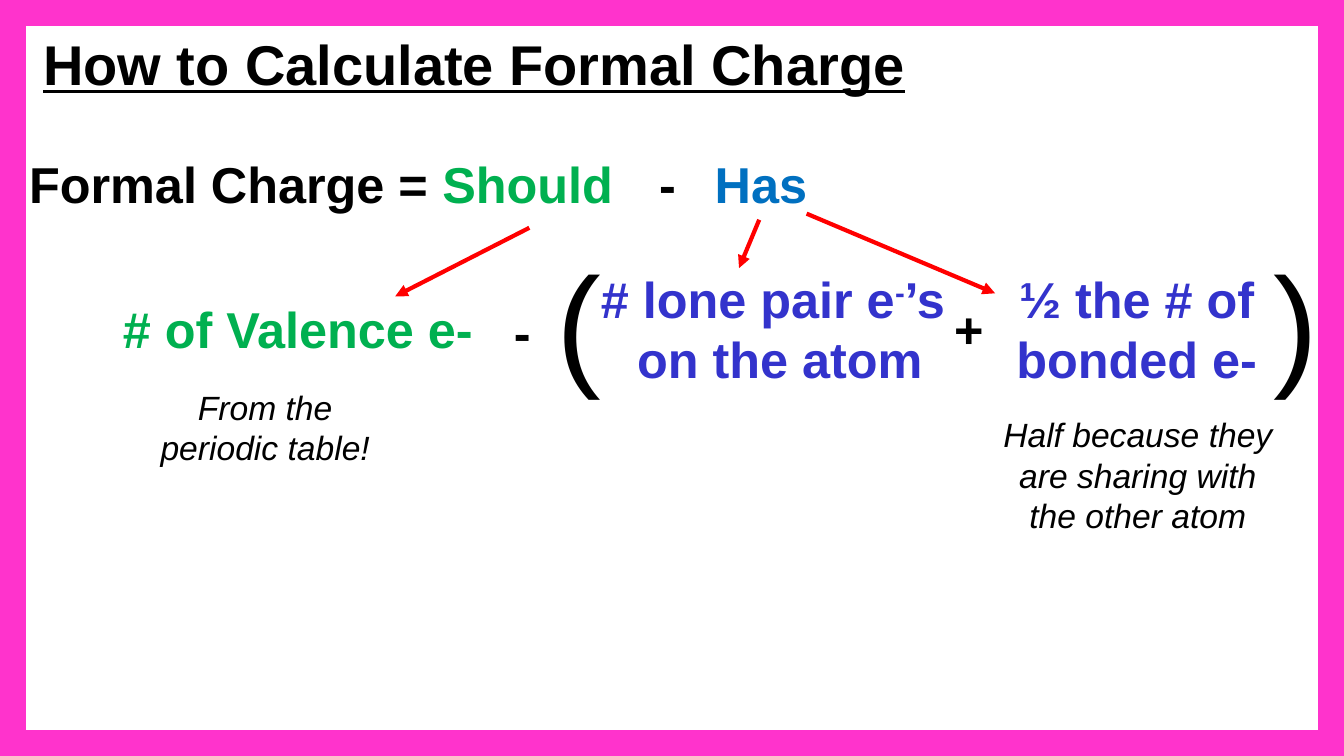
import pptx
import pptx.dml.color
import pptx.enum.shapes
import pptx.enum.text
import pptx.oxml
import pptx.oxml.ns
import pptx.util

Inches = pptx.util.Inches
ALIGN = pptx.enum.text.PP_ALIGN
COLORS = {
    "border": "FF33CC",
    "ink": "000000",
    "should": "00B050",
    "has": "0070C0",
    "owned": "3333CC",
    "arrow": "FF0000",
}

deck = pptx.Presentation()
deck.slide_width, deck.slide_height = Inches(13.33), Inches(7.5)
slide = deck.slides.add_slide(deck.slide_layouts[5])


def style(run, size, color, bold=False, italic=False):
    run.font.name = "Arial"
    run.font.size = pptx.util.Pt(size)
    run.font.bold = bold
    run.font.italic = italic
    run.font.color.rgb = pptx.dml.color.RGBColor.from_string(COLORS[color])


def add_text(box, text, size, color, bold=False, italic=False, align=ALIGN.CENTER):
    frame = slide.shapes.add_textbox(*map(Inches, box)).text_frame
    frame.word_wrap = True
    frame.text = text
    paragraph = frame.paragraphs[0]
    paragraph.alignment = align
    for run in paragraph.runs:
        style(run, size, color, bold, italic)
    return paragraph


# Pink border
border = slide.shapes.add_shape(
    pptx.enum.shapes.MSO_SHAPE.FRAME, 0, 0, deck.slide_width, deck.slide_height)
border.adjustments[0] = 0.032
border.shadow.inherit = False
border.fill.solid()
border.fill.fore_color.rgb = pptx.dml.color.RGBColor.from_string(COLORS["border"])
border.line.color.rgb = pptx.dml.color.RGBColor.from_string(COLORS["border"])
border.line.width = pptx.util.Pt(2)

# Title
title = slide.shapes.title
title.left, title.top = Inches(0.33), Inches(0.15)
title.width, title.height = Inches(10.42), Inches(0.95)
title.text_frame.text = "How to Calculate Formal Charge"
title.text_frame.auto_size = pptx.enum.text.MSO_AUTO_SIZE.NONE
title.text_frame.vertical_anchor = pptx.enum.text.MSO_ANCHOR.MIDDLE
heading = title.text_frame.paragraphs[0]
heading.alignment = ALIGN.LEFT
style(heading.runs[0], 40, "ink", bold=True)
heading.runs[0].font.underline = True

# Definition: should minus has
definition = add_text((0.19, 1.47, 6.2, 0.71), "Formal Charge = ", 36, "ink",
                      bold=True, align=ALIGN.LEFT)
should = definition.add_run()
should.text = "Should"
style(should, 36, "should", bold=True)
add_text((6.99, 1.47, 1.5, 0.71), "Has", 36, "has", bold=True, align=ALIGN.LEFT)

# Terms of the formula
add_text((1.08, 2.91, 3.75, 0.71), "# of Valence e-", 36, "should", bold=True)
add_text((9.4, 2.61, 3.75, 1.31), "½ the # of\vbonded e-", 36, "owned", bold=True)
lone_pairs = add_text((5.86, 2.61, 3.75, 1.31), "# lone pair e", 36, "owned", bold=True)
for part, baseline in (("-", "30000"), ("’s ", "0"), ("on the atom", "0")):
    if part == "on the atom":
        lone_pairs.add_line_break()
    run = lone_pairs.add_run()
    run.text = part
    style(run, 36, "owned", bold=True)
    run._r.get_or_add_rPr().set("baseline", baseline)

# Operators and parentheses
for left, top, operator in ((6.26, 1.47, "-"), (4.82, 2.94, "-"), (9.25, 2.91, "+")):
    add_text((left, top, 0.72, 0.71), operator, 36, "ink", bold=True)
for left, parenthesis in ((5.42, "("), (12.53, ")")):
    add_text((left, 2.31, 0.7, 1.72), parenthesis, 96, "ink", align=ALIGN.LEFT)

# Arrows from the definition to the terms
for start_x, start_y, end_x, end_y in (
    (5.25, 2.26, 3.92, 2.94),
    (7.53, 2.18, 7.33, 2.66),
    (8, 2.12, 9.87, 2.91),
):
    arrow = slide.shapes.add_connector(
        pptx.enum.shapes.MSO_CONNECTOR.STRAIGHT,
        Inches(start_x), Inches(start_y), Inches(end_x), Inches(end_y))
    arrow.line.color.rgb = pptx.dml.color.RGBColor.from_string(COLORS["arrow"])
    arrow.line.width = pptx.util.Pt(3)
    head = pptx.oxml.parse_xml(
        f'<a:tailEnd {pptx.oxml.ns.nsdecls("a")} type="triangle"/>')
    arrow.line._get_or_add_ln().append(head)
    arrow._element.spPr.append(
        pptx.oxml.parse_xml(f'<a:effectLst {pptx.oxml.ns.nsdecls("a")}/>'))

# Explanations under the terms
add_text((9.8, 4.06, 2.97, 1.31), "Half because they are sharing with the other atom",
         24, "ink", italic=True)
add_text((1.34, 3.79, 2.58, 0.91), "From the periodic table!", 24, "ink", italic=True)

deck.save("out.pptx")
